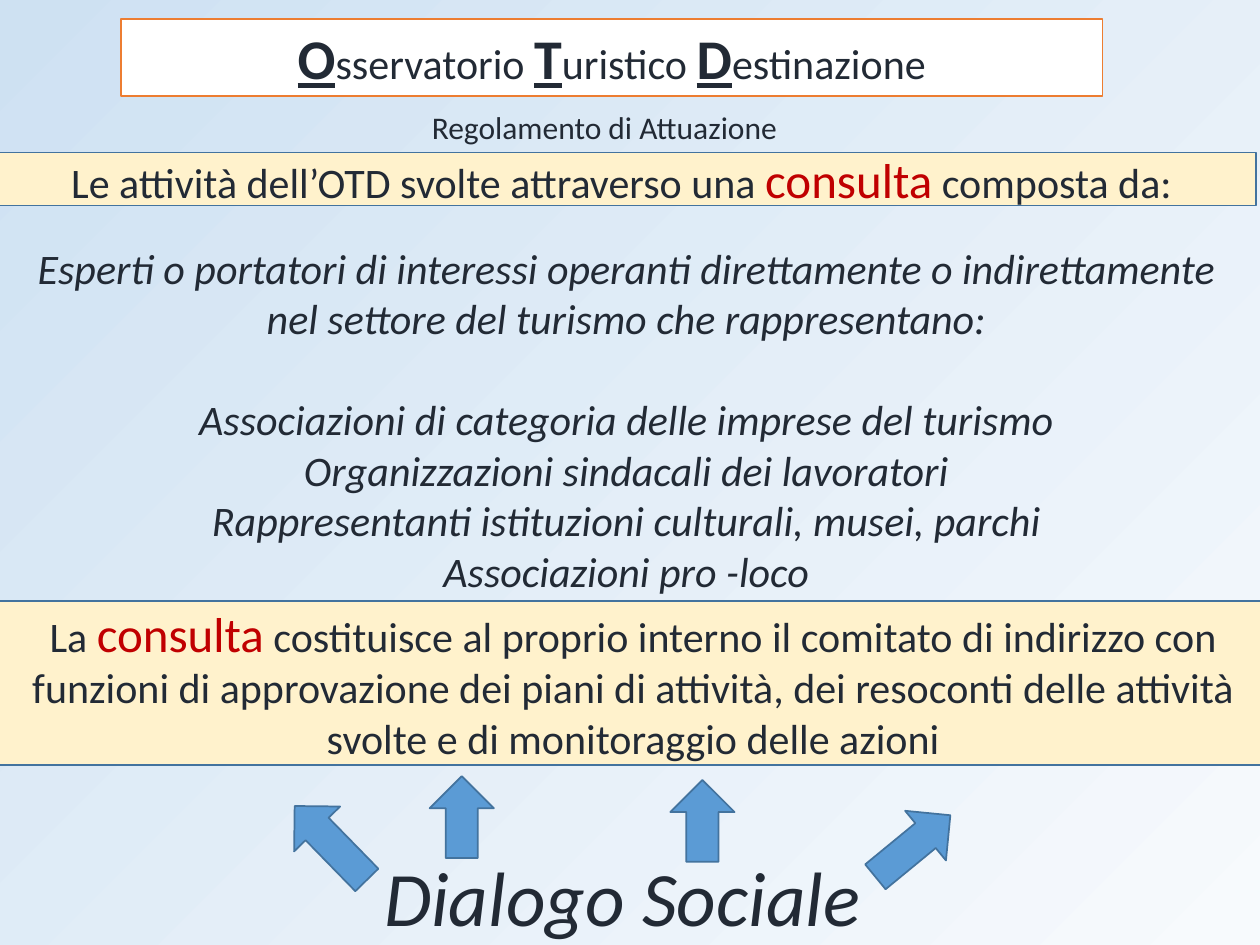
from dataclasses import dataclass

from pptx import Presentation
from pptx.dml.color import RGBColor
from pptx.enum import shapes, text
from pptx.util import Inches, Pt

INK, RED, BLUE, CREAM = "222A35", "C00000", "43739E", "FFF2CC"


@dataclass
class Run:
    text: str
    size: int = 24
    color: str = INK
    mark: bool = False  # bold and underlined
    slant: bool = False


@dataclass
class Box:
    left: float
    top: float
    width: float
    height: float
    turn: float = 0

    def spots(self) -> list:
        return [Inches(n) for n in (self.left, self.top, self.width, self.height)]


def paint(target, color: str) -> None:
    target.rgb = RGBColor.from_string(color)


def style(shape, fill: str = "", line: str = "") -> None:
    if fill:
        shape.fill.solid()
        paint(shape.fill.fore_color, fill)
    else:
        shape.fill.background()
    if line:
        paint(shape.line.color, line)
        shape.line.width = Pt(1)
    else:
        shape.line.fill.background()


def place(shape, box: Box) -> None:
    shape.left, shape.top, shape.width, shape.height = box.spots()


def write(shape, *rows: list[Run]) -> None:
    frame = shape.text_frame
    frame.word_wrap = True
    frame.auto_size = text.MSO_AUTO_SIZE.NONE
    frame.vertical_anchor = text.MSO_ANCHOR.MIDDLE
    for i, row in enumerate(rows):
        para = frame.add_paragraph() if i else frame.paragraphs[0]
        para.alignment = text.PP_ALIGN.CENTER
        para.space_before = Pt(0)
        for item in row:
            run = para.add_run()
            run.text = item.text
            font = run.font
            font.name, font.size = "Calibri", Pt(item.size)
            font.bold = font.underline = item.mark
            font.italic = item.slant
            paint(font.color, item.color)


def draw(slide, kind, box: Box, fill: str = "", line: str = ""):
    shape = slide.shapes.add_shape(kind, *box.spots())
    shape.shadow.inherit = False
    shape.rotation = box.turn
    style(shape, fill, line)
    return shape


def panel(slide, box: Box, row: list[Run], fill: str = "", line: str = "") -> None:
    kind = shapes.MSO_SHAPE.FLOWCHART_PROCESS
    write(draw(slide, kind, box, fill, line), row)


def main() -> None:
    deck = Presentation()
    deck.slide_width, deck.slide_height = Inches(10), Inches(7.5)
    slide = deck.slides.add_slide(deck.slide_layouts[1])

    # Background, light at the lower right
    back = slide.background.fill
    back.gradient()
    back.gradient_angle = 135
    for stop, color in zip(back.gradient_stops, ("F7FAFD", "CEE1F2")):
        paint(stop.color, color)

    # Title with large initials
    title = slide.shapes.title
    place(title, Box(0.96, 0.15, 7.79, 0.61))
    style(title, "FFFFFF", "ED7D31")
    words = ("Osservatorio ", "Turistico ", "Destinazione")
    write(title, [run for word in words
                  for run in (Run(word[0], 32, mark=True), Run(word[1:]))])

    # Members of the council
    body = slide.placeholders[1]
    place(body, Box(-0.03, 1.78, 10, 3.09))
    lines = (
        "Esperti o portatori di interessi operanti direttamente o indirettamente "
        "nel settore del turismo che rappresentano:",
        "Associazioni di categoria delle imprese del turismo",
        "Organizzazioni sindacali dei lavoratori",
        "Rappresentanti istituzioni culturali, musei, parchi",
        "Associazioni pro -loco",
    )
    write(body, *([Run(line, slant=True)] for line in lines))
    for para in body.text_frame.paragraphs:
        props = para._p.get_or_add_pPr()
        props.set("marL", "0")
        props.set("indent", "0")
        props.append(props.makeelement(
            "{http://schemas.openxmlformats.org/drawingml/2006/main}buNone", {}))
    body.text_frame.paragraphs[1].space_before = Pt(29)

    # Subtitle
    note = slide.shapes.add_textbox(*Box(-0.08, 0.81, 9.81, 0.4).spots())
    write(note, [Run("Regolamento di Attuazione ", 18)])

    # Bands and closing words
    key = Run("consulta", 28, RED)
    panel(slide, Box(-0.03, 1.21, 10, 0.42),
          [Run("Le attività dell’OTD svolte attraverso una "), key,
           Run(" composta da: ")], CREAM, BLUE)
    panel(slide, Box(-0.03, 4.77, 10.11, 1.3),
          [Run("La "), key,
           Run(" costituisce al proprio interno il comitato di indirizzo con "
               "funzioni di approvazione dei piani di attività, dei resoconti "
               "delle attività svolte e di monitoraggio delle azioni")],
          CREAM, BLUE)
    panel(slide, Box(0.39, 6.69, 9.1, 0.84),
          [Run("Dialogo Sociale", 44, slant=True)])

    # Arrows rising to the lower band
    for box in (Box(2.37, 6.28, 0.51, 0.82, 315.7),
                Box(3.41, 6.16, 0.51, 0.65),
                Box(5.32, 6.19, 0.51, 0.65),
                Box(6.99, 6.33, 0.51, 0.77, 50.6)):
        draw(slide, shapes.MSO_SHAPE.UP_ARROW, box, "5B9BD5", BLUE)

    deck.save("out.pptx")


if __name__ == "__main__":
    main()
